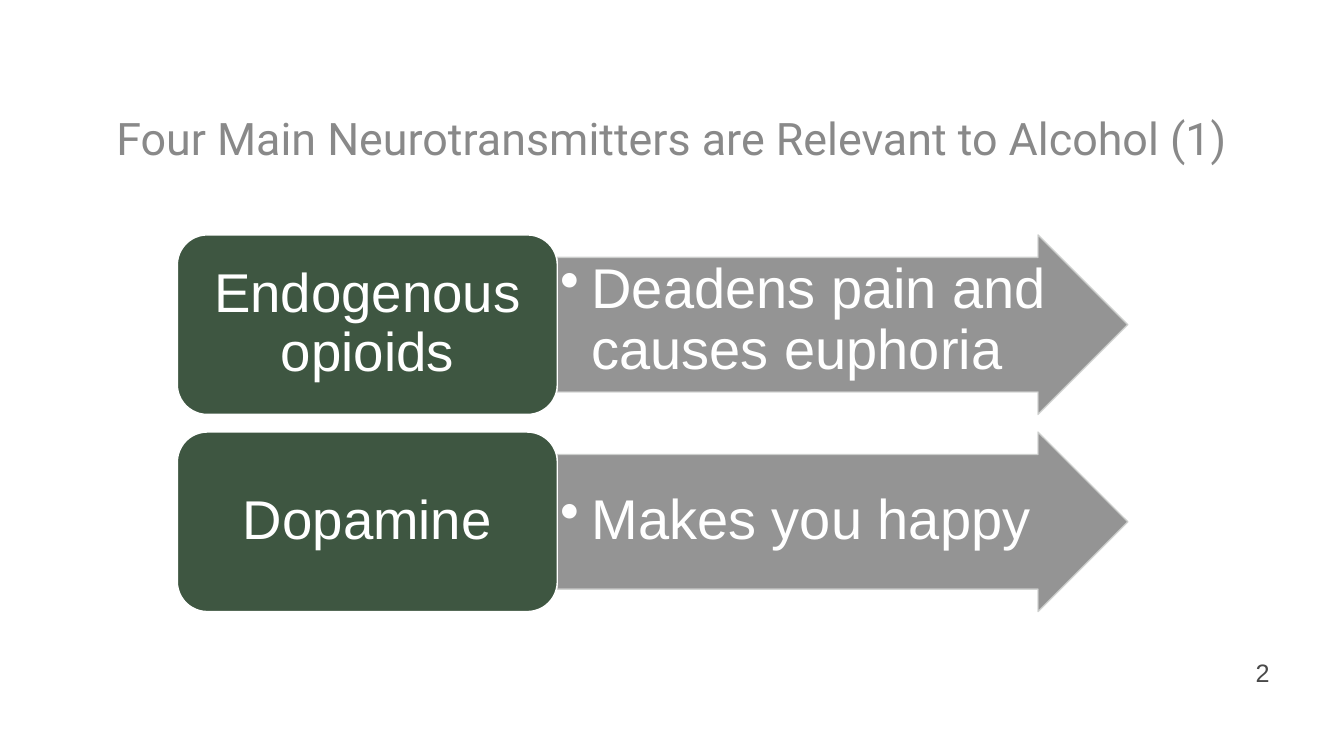
"""Build a slide on two neurotransmitters relevant to alcohol."""
from lxml import etree
from pptx import Presentation
from pptx.dml.color import RGBColor
from pptx.enum.shapes import MSO_SHAPE
from pptx.enum.text import MSO_ANCHOR, PP_ALIGN
from pptx.oxml.ns import qn
from pptx.util import Pt

ROUNDED = MSO_SHAPE.ROUNDED_RECTANGLE
ARROW = MSO_SHAPE.RIGHT_ARROW
TOP, MIDDLE = MSO_ANCHOR.TOP, MSO_ANCHOR.MIDDLE
LEFT, CENTER = PP_ALIGN.LEFT, PP_ALIGN.CENTER

WHITE = RGBColor(0xFF, 0xFF, 0xFF)
GREEN = RGBColor(0x3E, 0x56, 0x41)
GRAY = RGBColor(0x89, 0x89, 0x89)
PALE_GRAY = RGBColor(0xCF, 0xD1, 0xCF)
DARK_GRAY = RGBColor(0x49, 0x49, 0x49)

ROW_TOP, ROW_PITCH, ROW_HEIGHT = 167.8, 140.8, 128.2
NAME_LEFT, NAME_WIDTH = 126.7, 271.4
ARROW_LEFT, ARROW_WIDTH = NAME_LEFT + NAME_WIDTH, 407.5
ROWS = [
    ("Endogenous opioids", "Deadens pain and causes euphoria", TOP),
    ("Dopamine", "Makes you happy", MIDDLE),
]


def write(shape, text, font, size, color, align, anchor, margins=(7.2, 3.6)):
    frame = shape.text_frame
    frame.word_wrap = True
    frame.vertical_anchor = anchor
    frame.margin_left = frame.margin_right = Pt(margins[0])
    frame.margin_top = frame.margin_bottom = Pt(margins[1])
    para = frame.paragraphs[0]
    para.alignment = align
    para.line_spacing = 0.9
    span = para.add_run()
    span.text = text
    span.font.name = font
    span.font.size = Pt(size)
    span.font.color.rgb = color
    return para


def add_block(kind, left, top, width, fill, line):
    block = slide.shapes.add_shape(kind, Pt(left), Pt(top), Pt(width), Pt(ROW_HEIGHT))
    block.shadow.inherit = False
    block.fill.solid()
    block.fill.fore_color.rgb = fill
    block.line.color.rgb = line
    block.line.width = Pt(1)
    return block


deck = Presentation()
deck.slide_width, deck.slide_height = Pt(960), Pt(540)
slide = deck.slides.add_slide(deck.slide_layouts[5])

title = slide.shapes.title
title.left, title.top, title.width, title.height = Pt(72), Pt(64.8), Pt(816), Pt(72)
write(title, "Four Main Neurotransmitters are Relevant to Alcohol (1)",
      "Roboto", 32, GRAY, CENTER, MIDDLE)

for row, (name, effect, anchor) in enumerate(ROWS):
    top = ROW_TOP + row * ROW_PITCH

    arrow = add_block(ARROW, ARROW_LEFT, top, ARROW_WIDTH, GRAY, PALE_GRAY)
    arrow.adjustments[0], arrow.adjustments[1] = 0.75, 0.5
    for color in arrow._element.spPr.iter(qn("a:srgbClr")):
        etree.SubElement(color, qn("a:alpha"), val="90000")
    para = write(arrow, effect, "Arial", 40, WHITE, LEFT, anchor, (2, 2))
    properties = para._p.get_or_add_pPr()
    properties.set("marL", str(Pt(22.5)))
    properties.set("indent", str(-Pt(22.5)))
    etree.SubElement(properties, qn("a:buChar"), char="•")

    block = add_block(ROUNDED, NAME_LEFT, top, NAME_WIDTH, GREEN, WHITE)
    write(block, name, "Arial", 39, WHITE, CENTER, MIDDLE, (11.5, 5.8))

number = slide.shapes.add_textbox(Pt(882), Pt(467.3), Pt(39.6), Pt(28.8))
write(number, "2", "Arial", 18, DARK_GRAY, CENTER, MIDDLE)

deck.save("out.pptx")
